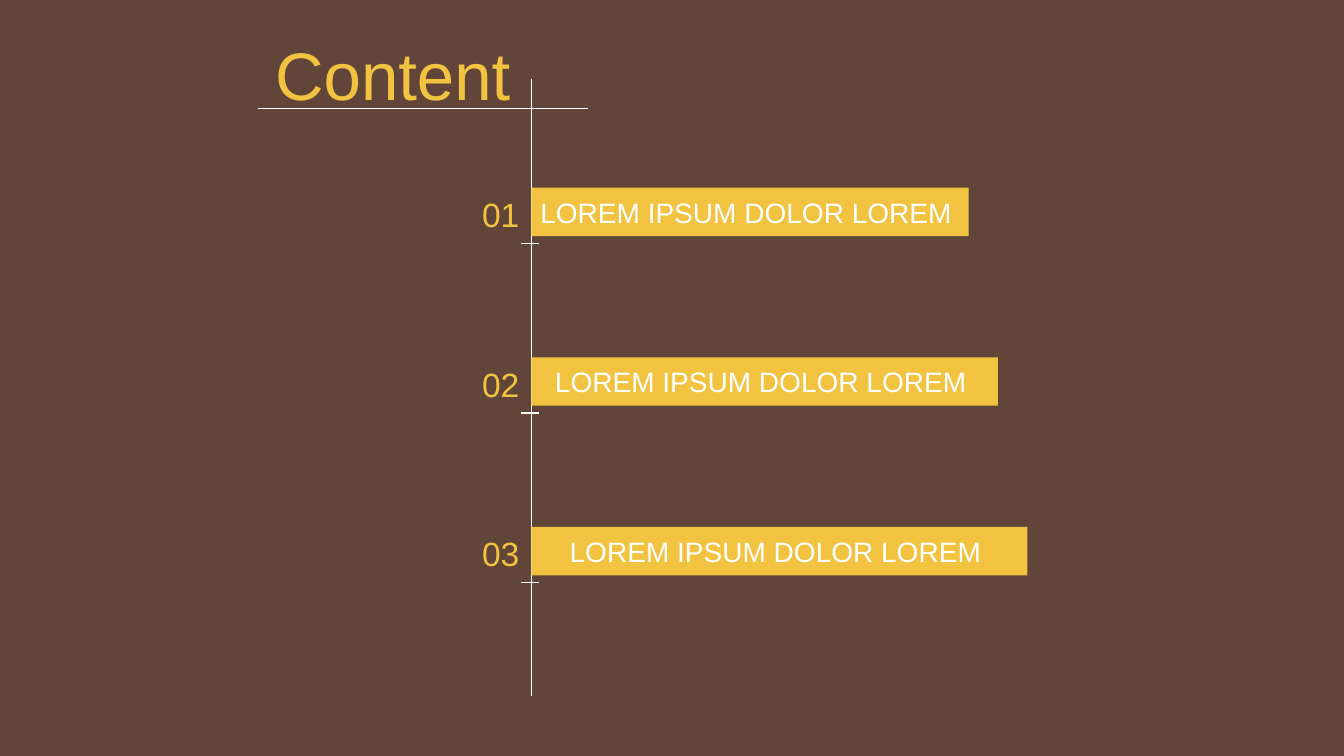
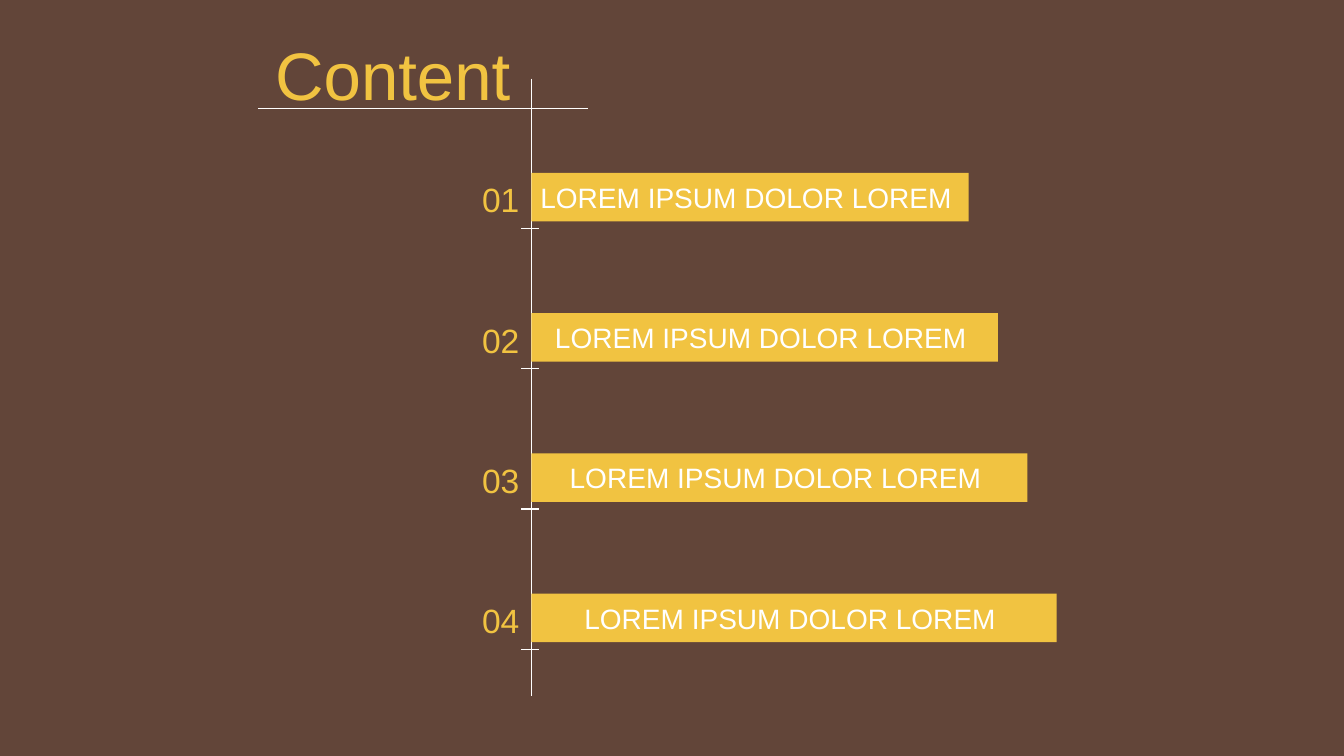
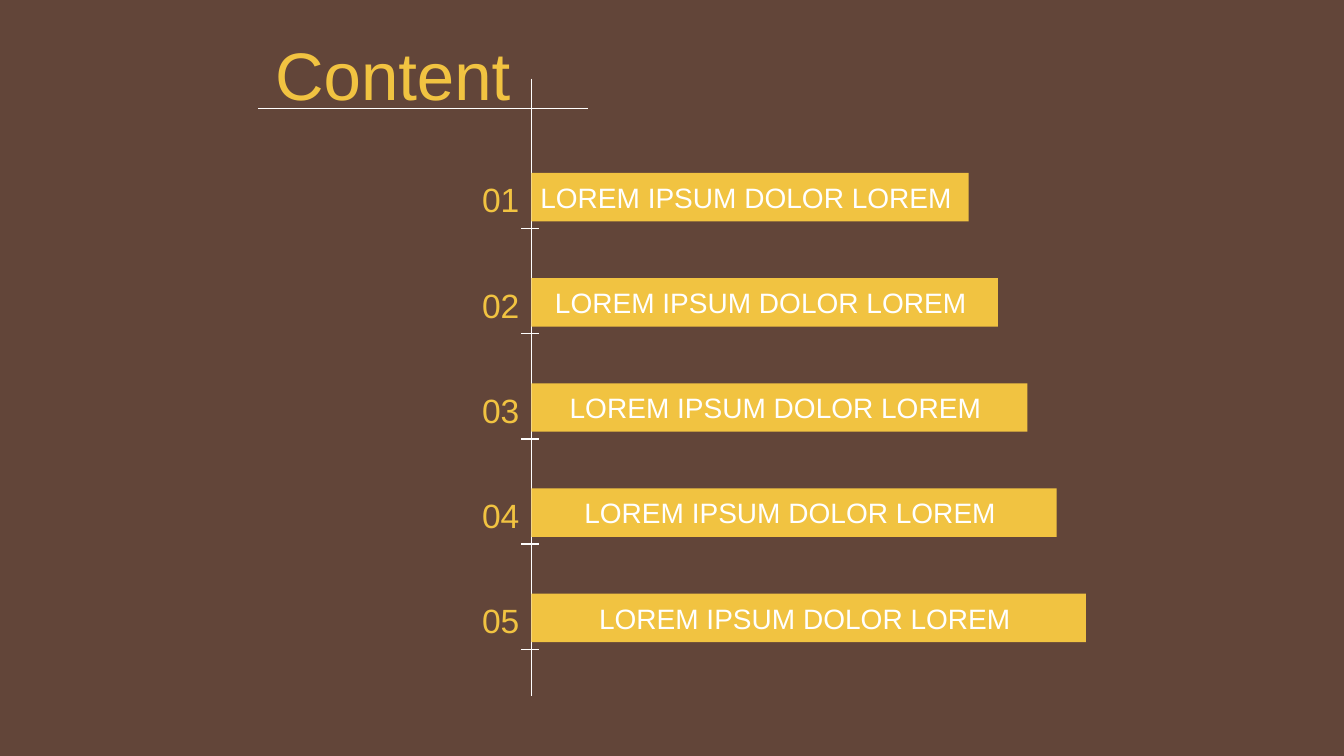
from dataclasses import dataclass

from lxml.etree import SubElement
from pptx import Presentation
from pptx.dml.color import RGBColor
from pptx.enum.shapes import MSO_CONNECTOR, MSO_SHAPE
from pptx.enum.text import MSO_ANCHOR, MSO_AUTO_SIZE, PP_ALIGN
from pptx.oxml.ns import qn
from pptx.util import Cm, Pt


@dataclass(frozen=True)
class Theme:
    back: RGBColor = RGBColor.from_string("624539")
    gold: RGBColor = RGBColor.from_string("F1C341")
    white: RGBColor = RGBColor.from_string("FFFFFF")
    font: str = "Arial"
    title: Pt = Pt(48)
    number: Pt = Pt(24)
    label: Pt = Pt(20)
    rule: Pt = Pt(1)


theme = Theme()


def write(shape, text, size, color, frame, para):
    """Fill a shape with one line of text; frame and para hold format values."""
    for name, value in frame.items():
        setattr(shape.text_frame, name, value)
    line = shape.text_frame.paragraphs[0]
    for name, value in para.items():
        setattr(line, name, value)
    run = line.add_run()
    run.text = text
    run.font.name, run.font.size = theme.font, size
    run.font.color.rgb = color


def rule(slide, *ends):
    """Draw a thin white line; ends are x1, y1, x2, y2 in centimetres."""
    line = slide.shapes.add_connector(MSO_CONNECTOR.STRAIGHT, *map(Cm, ends))
    line.line.color.rgb = theme.white
    line.line.width = theme.rule
    SubElement(line._element.spPr, qn("a:effectLst"))


title_frame = {"vertical_anchor": MSO_ANCHOR.MIDDLE, "word_wrap": True,
               "auto_size": MSO_AUTO_SIZE.NONE}
title_para = {"alignment": PP_ALIGN.LEFT, "line_spacing": 0.8}
number_frame = {"word_wrap": True, "auto_size": MSO_AUTO_SIZE.SHAPE_TO_FIT_TEXT}
number_para = {"alignment": PP_ALIGN.RIGHT, "line_spacing": 1.2}
bar_frame = {"vertical_anchor": MSO_ANCHOR.MIDDLE, "word_wrap": True,
             "margin_left": 0, "margin_right": 0, "margin_top": 0, "margin_bottom": 0}
bar_para = {"alignment": PP_ALIGN.CENTER}

deck = Presentation()
deck.slide_width, deck.slide_height = Cm(33.87), Cm(19.05)

fill = deck.slide_master.background.fill
fill.solid()
fill.fore_color.rgb = theme.back

layout = deck.slide_layouts[5]
place = {"left": Cm(6.68), "top": Cm(1.07), "width": Cm(6.71), "height": Cm(1.96)}
for name, value in place.items():
    setattr(layout.placeholders[0], name, value)

# All lengths in centimetres: the axis, and the bars that grow along it
axis = 13.39
wide, grow, high = 11.02, 0.74, 1.22

# Number of bars, top of the first bar, top of the last bar
for count, first, last in [(3, 4.73, 13.28), (4, 4.36, 14.96), (5, 4.36, 14.96)]:
    slide = deck.slides.add_slide(layout)
    write(slide.shapes.title, "Content", theme.title, theme.gold,
          title_frame, title_para)
    rule(slide, 6.5, 2.74, 14.81, 2.74)
    rule(slide, axis, 1.98, axis, 17.53)

    step = (last - first) / (count - 1)
    for i in range(count):
        top = first + i * step
        rule(slide, 13.13, top + 1.4, 13.59, top + 1.4)

        number = slide.shapes.add_textbox(Cm(11.38), Cm(top - 0.17), Cm(1.96), Cm(1.37))
        write(number, f"{i + 1:02}", theme.number, theme.gold,
              number_frame, number_para)

        bar = slide.shapes.add_shape(MSO_SHAPE.RECTANGLE, Cm(axis), Cm(top),
                                     Cm(wide + i * grow), Cm(high))
        bar.shadow.inherit = False
        bar.fill.solid()
        bar.fill.fore_color.rgb = theme.gold
        bar.line.fill.background()
        write(bar, "LOREM IPSUM DOLOR LOREM ", theme.label, theme.white,
              bar_frame, bar_para)

deck.save("out.pptx")
